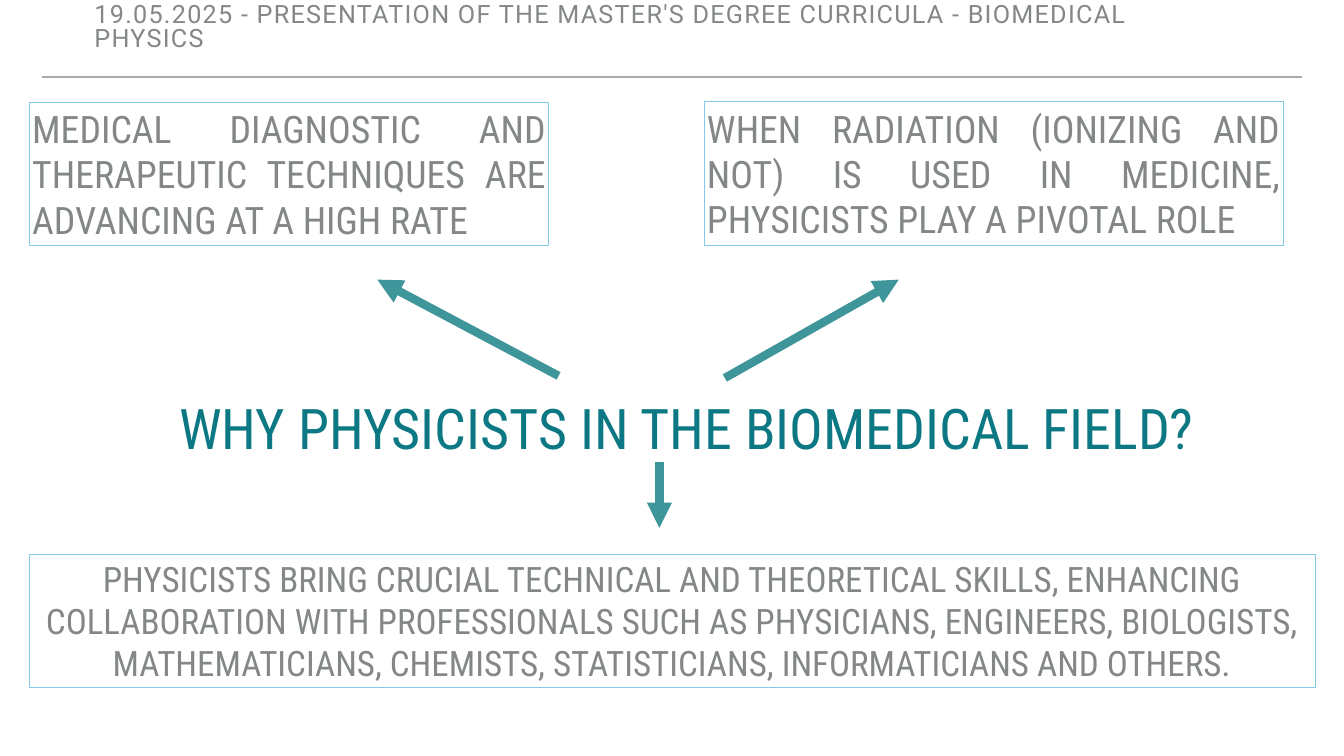
from dataclasses import dataclass
from typing import Optional

from lxml.etree import SubElement
from pptx import Presentation
from pptx.dml.color import RGBColor
from pptx.enum.shapes import MSO_CONNECTOR as Connector, MSO_SHAPE as Preset
from pptx.enum.text import MSO_ANCHOR as Anchor, PP_ALIGN as Align
from pptx.oxml.ns import qn
from pptx.util import Pt

TEAL = RGBColor(0x0C, 0x78, 0x83)
ARROW_TEAL = RGBColor(0x3F, 0x96, 0x9A)
GREY = RGBColor(0x83, 0x87, 0x87)
RULE_GREY = RGBColor(0xA6, 0xAA, 0xA9)
FRAME_BLUE = RGBColor(0x85, 0xC9, 0xE9)
INSET = 4


@dataclass
class Statement:
    text: str
    left: float
    top: float
    width: float
    height: float
    size: float
    align: Align = Align.LEFT
    anchor: Anchor = Anchor.MIDDLE
    font: str = "Roboto Condensed"
    color: RGBColor = GREY
    frame: Optional[RGBColor] = FRAME_BLUE
    line_spacing: float = 1.0
    tracking: float = 0


@dataclass
class Stroke:
    start: tuple[float, float]
    end: tuple[float, float]
    color: RGBColor = ARROW_TEAL
    width: float = 12
    arrow: bool = True


STROKES = [
    Stroke((60, 110), (1860, 110), RULE_GREY, 2, False),
    Stroke((798, 537), (539, 399.5)),
    Stroke((1035.5, 540), (1284, 399.5)),
    Stroke((942, 659.5), (942, 754)),
]

STATEMENTS = [
    Statement("WHY PHYSICISTS IN THE BIOMEDICAL FIELD?",
              201, 558, 1561, 101.5, 80, Align.CENTER, Anchor.TOP,
              color=TEAL, frame=None),
    Statement("MEDICAL DIAGNOSTIC AND THERAPEUTIC TECHNIQUES ARE "
              "ADVANCING AT A HIGH RATE",
              42, 146, 742, 204.5, 54, Align.JUSTIFY),
    Statement("WHEN RADIATION (IONIZING AND NOT) IS USED IN MEDICINE, "
              "PHYSICISTS PLAY A PIVOTAL ROLE",
              1006, 145.5, 827, 204.5, 54, Align.JUSTIFY),
    Statement("PHYSICISTS BRING CRUCIAL TECHNICAL AND THEORETICAL SKILLS, "
              "ENHANCING COLLABORATION WITH PROFESSIONALS SUCH AS PHYSICIANS, "
              "ENGINEERS, BIOLOGISTS, MATHEMATICIANS, CHEMISTS, "
              "STATISTICIANS, INFORMATICIANS AND OTHERS.",
              42, 791.5, 1837.5, 190, 50, Align.CENTER),
    Statement("19.05.2025 - PRESENTATION OF THE MASTER'S DEGREE CURRICULA - "
              "BIOMEDICAL PHYSICS",
              131, 34.5, 1650, 44, 36, anchor=Anchor.BOTTOM, font="Roboto",
              frame=None, line_spacing=0.8, tracking=1.8),
]


def draw_statement(shapes, statement: Statement) -> None:
    bounds = [Pt(length) for length in (statement.left, statement.top,
                                        statement.width, statement.height)]
    if statement.frame is None:
        box = shapes.add_textbox(*bounds)
    else:
        box = shapes.add_shape(Preset.RECTANGLE, *bounds)
        box.shadow.inherit = False
        box.fill.background()
        box.line.color.rgb = statement.frame
        box.line.width = Pt(1)
    body = box.text_frame
    body.text = statement.text
    body.word_wrap = True
    body.vertical_anchor = statement.anchor
    body.margin_left = body.margin_right = Pt(INSET)
    body.margin_top = body.margin_bottom = Pt(INSET)
    paragraph = body.paragraphs[0]
    paragraph.alignment = statement.align
    paragraph.line_spacing = statement.line_spacing
    run = paragraph.runs[0]
    run.font.name = statement.font
    run.font.size = Pt(statement.size)
    run.font.color.rgb = statement.color
    if statement.tracking:
        run.font._element.set("spc", str(round(statement.tracking * 100)))


def draw_stroke(shapes, stroke: Stroke) -> None:
    points = [Pt(length) for length in (*stroke.start, *stroke.end)]
    connector = shapes.add_connector(Connector.STRAIGHT, *points)
    connector.line.color.rgb = stroke.color
    connector.line.width = Pt(stroke.width)
    if stroke.arrow:
        SubElement(connector.line._get_or_add_ln(), qn("a:tailEnd"), type="triangle")
    SubElement(connector._element.spPr, qn("a:effectLst"))


def main() -> None:
    deck = Presentation()
    deck.slide_width, deck.slide_height = Pt(1920), Pt(1080)
    slide = deck.slides.add_slide(deck.slide_layouts[6])
    for stroke in STROKES:
        draw_stroke(slide.shapes, stroke)
    for statement in STATEMENTS:
        draw_statement(slide.shapes, statement)
    deck.save("out.pptx")


if __name__ == "__main__":
    main()
